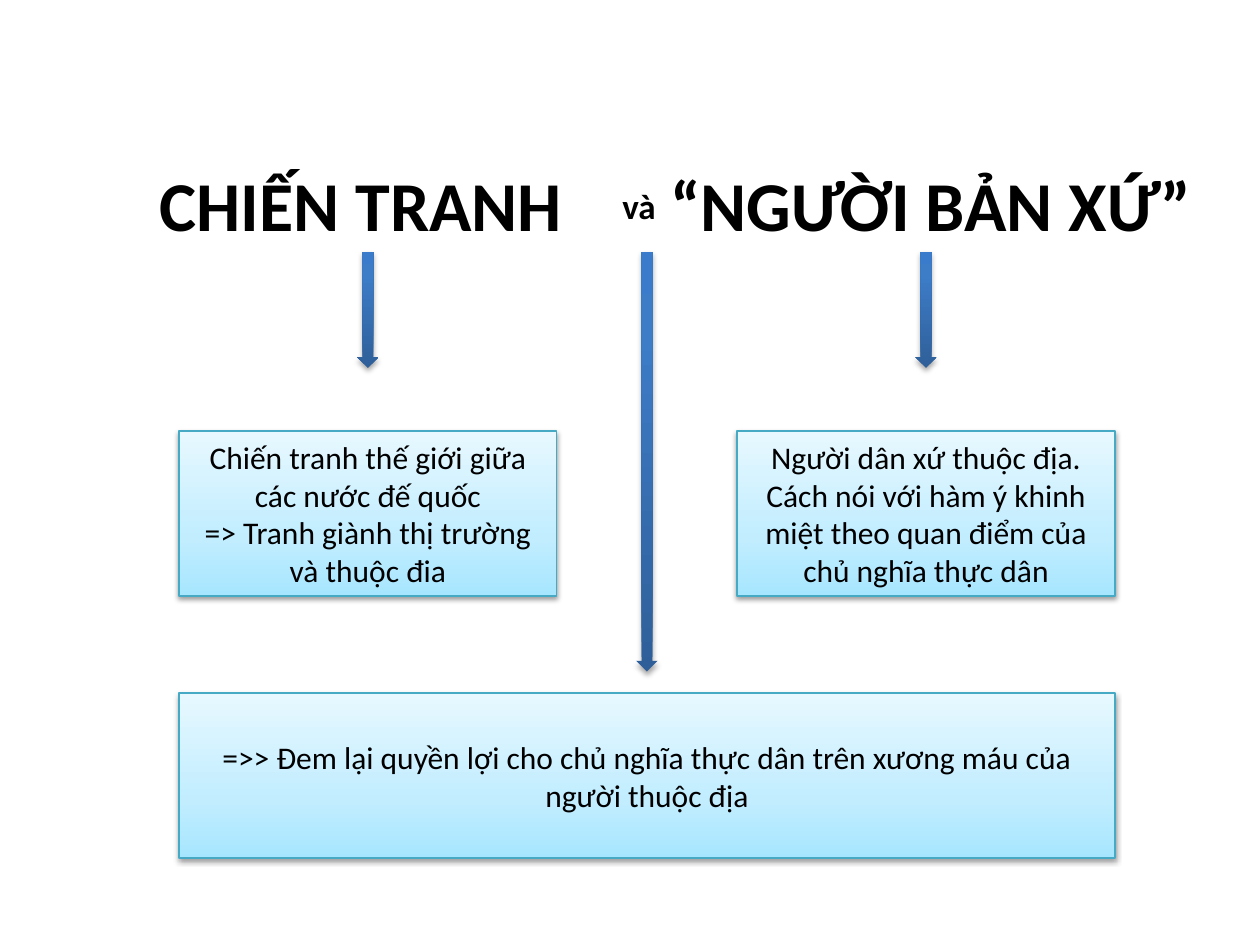
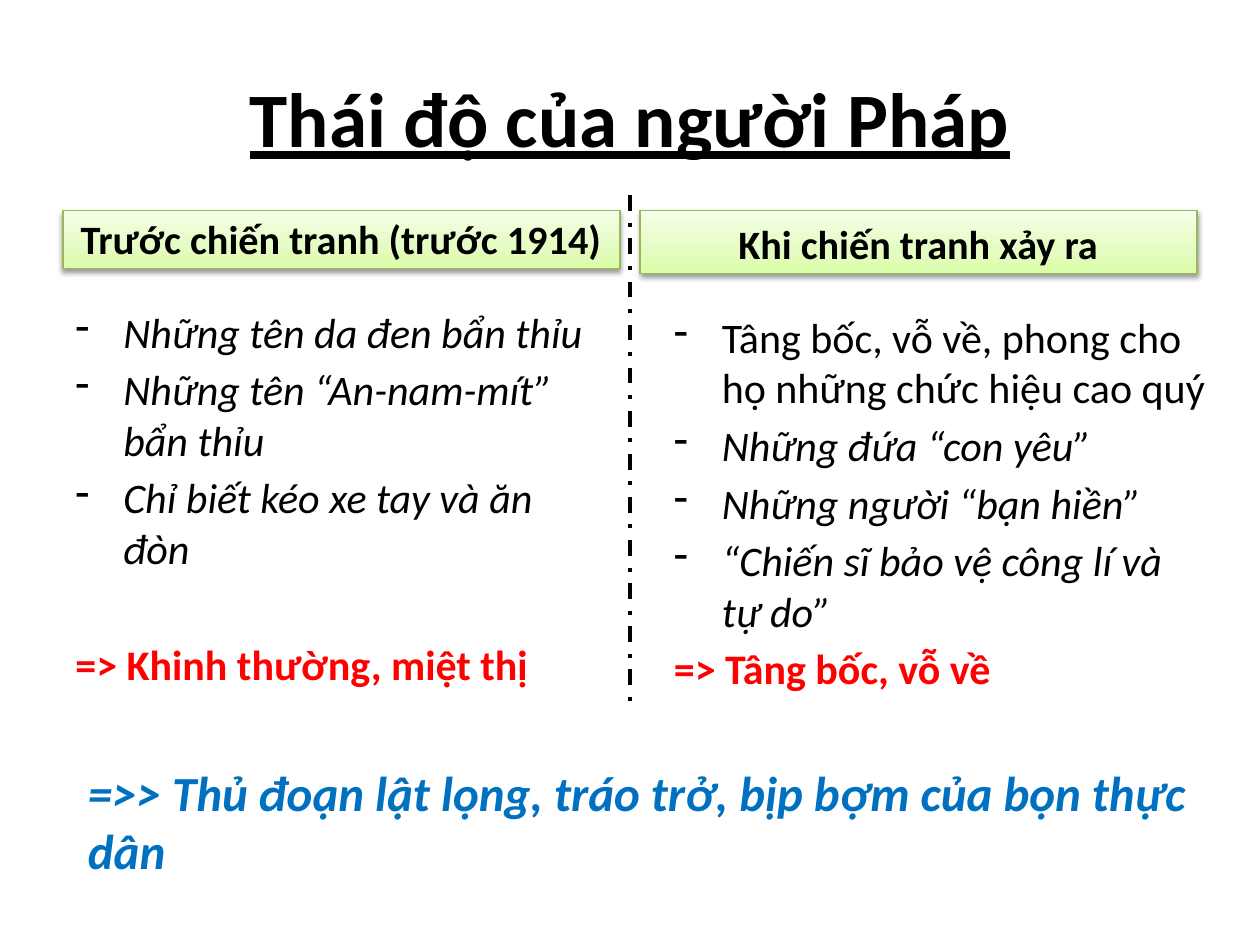
import pptx
import pptx.util
import pptx.dml.color
import pptx.enum.dml
import pptx.enum.shapes
import pptx.enum.text
import pptx.oxml.ns
from lxml import etree

Inches = pptx.util.Inches
Pt = pptx.util.Pt
qn = pptx.oxml.ns.qn
ALIGN = pptx.enum.text.PP_ALIGN
ANCHOR = pptx.enum.text.MSO_ANCHOR
SHAPES = pptx.enum.shapes.MSO_SHAPE

# Content
HEADINGS = [
    # text, (left, top, width, height), size
    ("CHIẾN TRANH", (1.17, 1.23, 3.5, 0.77), 40),
    ("“NGƯỜI BẢN XỨ”", (5.22, 1.23, 4.42, 0.77), 40),
    ("và", (4.84, 1.38, 0.58, 0.47), 20),
]
MEANINGS = [
    ["Chiến tranh thế giới giữa các nước đế quốc", "=> Tranh giành thị trường và thuộc đia"],
    ["Người dân xứ thuộc địa. Cách nói với hàm ý khinh miệt theo quan điểm của chủ nghĩa thực dân"],
]
RESULT = "=>> Đem lại quyền lợi cho chủ nghĩa thực dân trên xương máu của người thuộc địa"

ATTITUDE_TITLE = "Thái độ của người Pháp"
ATTITUDES = [
    {
        "heading": "Trước chiến tranh (trước 1914)",
        "heading_box": (0.5, 1.67, 4.42, 0.46),
        "list_box": (0.5, 2.38, 4.42, 4.32),
        "points": [
            ("Những tên da đen bẩn thỉu", True),
            ("Những tên “An-nam-mít” bẩn thỉu", True),
            ("Chỉ biết kéo xe tay và ăn đòn", True),
        ],
        "verdict": "=> Khinh thường, miệt thị",
        "verdict_gap": 37.7,
    },
    {
        "heading": "Khi chiến tranh xảy ra",
        "heading_box": (5.08, 1.67, 4.42, 0.5),
        "list_box": (5.25, 2.42, 4.42, 4.32),
        "points": [
            ("Tâng bốc, vỗ về, phong cho họ những chức hiệu cao quý", False),
            ("Những đứa “con yêu”", True),
            ("Những người “bạn hiền”", True),
            ("“Chiến sĩ bảo vệ công lí và tự do”", True),
        ],
        "verdict": "=> Tâng bốc, vỗ về",
        "verdict_gap": 4.2,
    },
]
CONCLUSION = "=>> Thủ đoạn lật lọng, tráo trở, bịp bợm của bọn thực dân"

# Shared style
FONT = "Calibri"
BLACK, RED, BLUE = "000000", "FF0000", "0070C0"
POINT_GAP = 4.2
ARROW_STYLE = {"stops": [(0, "2F5F99"), (80, "3D7CC7"), (100, "3A7CCB")], "line": None, "shadow": (35, 1.8)}
CYAN_STYLE = {"stops": [(0, "A7E6FF"), (35, "C1EDFF"), (100, "E7F8FF")], "line": "46AAC5", "shadow": (38, 1.6)}
GREEN_STYLE = {"stops": [(0, "DAFDA7"), (35, "E4FCC2"), (100, "F5FFE7")], "line": "98B955", "shadow": (38, 1.6)}


def color(value):
    return pptx.dml.color.RGBColor.from_string(value)


def format_runs(paragraph, size, hex_color=BLACK, bold=False, italic=False, underline=False):
    for run in paragraph.runs:
        font = run.font
        font.name, font.size = FONT, Pt(size)
        font.color.rgb = color(hex_color)
        font.bold, font.italic, font.underline = bold, italic, underline


def write(shape, lines, size, align=ALIGN.LEFT, anchor=ANCHOR.TOP, **style):
    frame = shape.text_frame
    frame.word_wrap = True
    frame.vertical_anchor = anchor
    frame.text = "\n".join(lines)
    for paragraph in frame.paragraphs:
        paragraph.alignment = align
        format_runs(paragraph, size, **style)


def add_text(slide, box, lines, size, **style):
    shape = slide.shapes.add_textbox(*map(Inches, box))
    write(shape, lines, size, **style)
    return shape


def add_xml_color(parent, value):
    return etree.SubElement(parent, qn("a:srgbClr"), val=value)


def add_shaded_shape(slide, kind, box, style):
    shape = slide.shapes.add_shape(kind, *map(Inches, box))
    # Gradient running from bottom to top
    shape.fill.gradient()
    shape.fill.gradient_angle = 90
    properties = shape._element.spPr
    stop_list = properties.find(qn("a:gradFill")).find(qn("a:gsLst"))
    for stop in list(stop_list):
        stop_list.remove(stop)
    for position, value in style["stops"]:
        add_xml_color(etree.SubElement(stop_list, qn("a:gs"), pos=str(position * 1000)), value)
    # Outline
    if style["line"]:
        shape.line.color.rgb = color(style["line"])
        shape.line.width = Pt(0.75)
    else:
        shape.line.fill.background()
    # Soft shadow below
    shape.shadow.inherit = False
    alpha, distance = style["shadow"]
    shadow = etree.SubElement(
        properties.find(qn("a:effectLst")), qn("a:outerShdw"),
        blurRad=str(Pt(3.1)), dist=str(Pt(distance)), dir="5400000", rotWithShape="0")
    etree.SubElement(add_xml_color(shadow, BLACK), qn("a:alpha"), val=str(alpha * 1000))
    return shape


def add_bullet(paragraph):
    properties = paragraph._p.get_or_add_pPr()
    properties.set("marL", str(Inches(0.38)))
    properties.set("indent", str(-Inches(0.38)))
    etree.SubElement(properties, qn("a:buChar"), char="-")


def add_points(slide, attitude):
    lines = [text for text, italic in attitude["points"]] + [attitude["verdict"]]
    shape = add_text(slide, attitude["list_box"], lines, 24)
    *points, verdict = shape.text_frame.paragraphs
    for index, (paragraph, (text, italic)) in enumerate(zip(points, attitude["points"])):
        if index:
            paragraph.space_before = Pt(POINT_GAP)
        add_bullet(paragraph)
        format_runs(paragraph, 24, italic=italic)
    verdict.space_before = Pt(attitude["verdict_gap"])
    format_runs(verdict, 24, RED, bold=True)


def build_terms_slide(presentation):
    slide = presentation.slides.add_slide(presentation.slide_layouts[6])
    left, box_width, box_height, full_width = 1.42, 3, 1.31, 7.43
    box_lefts = [left, left + full_width - box_width]

    # Arrows centred over the boxes
    arrow_width = 0.17
    targets = [(box_left + box_width / 2, 0.92) for box_left in box_lefts]
    targets.append((left + full_width / 2, 3.33))
    for center, length in targets:
        add_shaded_shape(slide, SHAPES.DOWN_ARROW,
                         (center - arrow_width / 2, 2, arrow_width, length), ARROW_STYLE)

    # Meaning of each term, then the result
    boxes = [(box_left, 3.42, box_width, box_height) for box_left in box_lefts]
    boxes.append((left, 5.5, full_width, box_height))
    for box, lines in zip(boxes, MEANINGS + [[RESULT]]):
        shape = add_shaded_shape(slide, SHAPES.RECTANGLE, box, CYAN_STYLE)
        write(shape, lines, 18, align=ALIGN.CENTER, anchor=ANCHOR.MIDDLE)

    # Terms
    for text, box, size in HEADINGS:
        add_text(slide, box, [text], size, anchor=ANCHOR.BOTTOM, bold=True)


def build_attitude_slide(presentation):
    slide = presentation.slides.add_slide(presentation.slide_layouts[5])
    title = slide.shapes.title
    title.left, title.top, title.width, title.height = map(Inches, (0.5, 0.3, 9, 1.25))
    write(title, [ATTITUDE_TITLE], 44, align=ALIGN.CENTER, anchor=ANCHOR.MIDDLE, bold=True, underline=True)

    # Two columns
    for attitude in ATTITUDES:
        heading = add_shaded_shape(slide, SHAPES.RECTANGLE, attitude["heading_box"], GREEN_STYLE)
        write(heading, [attitude["heading"]], 23, align=ALIGN.CENTER, anchor=ANCHOR.BOTTOM, bold=True)
        add_points(slide, attitude)

    # Divider
    divider = slide.shapes.add_connector(
        pptx.enum.shapes.MSO_CONNECTOR.STRAIGHT, *map(Inches, (5, 1.55, 5, 5.58)))
    divider.line.color.rgb = color(BLACK)
    divider.line.width = Pt(2.25)
    divider.line.dash_style = pptx.enum.dml.MSO_LINE.DASH_DOT
    etree.SubElement(divider._element.spPr, qn("a:effectLst"))

    # Conclusion
    add_text(slide, (0.6, 6, 9.07, 1.04), [CONCLUSION], 28, hex_color=BLUE, bold=True, italic=True)


def main():
    presentation = pptx.Presentation()
    presentation.slide_width, presentation.slide_height = Inches(10), Inches(7.5)
    build_terms_slide(presentation)
    build_attitude_slide(presentation)
    presentation.save("out.pptx")


if __name__ == "__main__":
    main()
